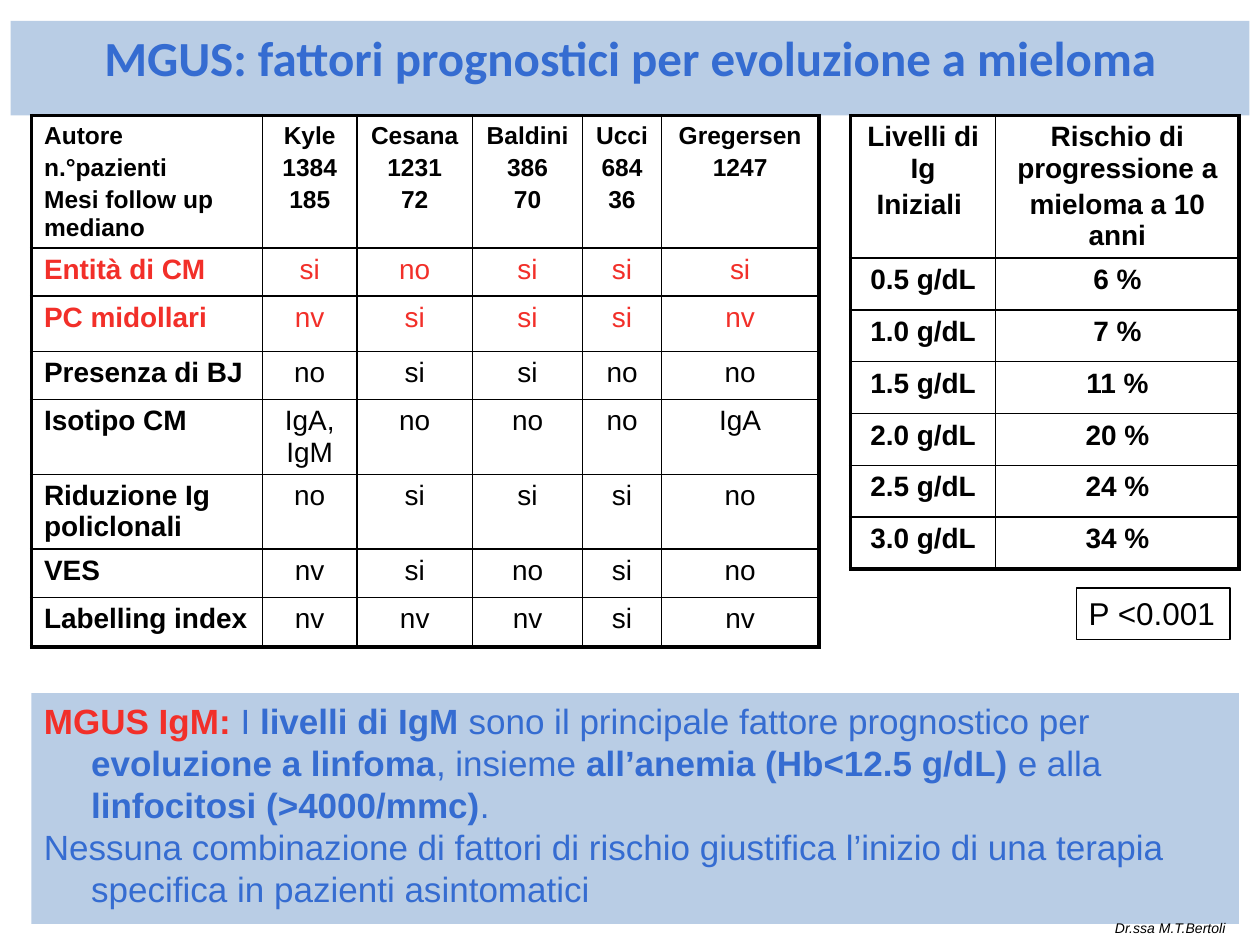
"""Build the slide on prognostic factors for the evolution of MGUS to myeloma."""
from dataclasses import dataclass

from lxml import etree
from pptx import Presentation
from pptx.dml.color import RGBColor
from pptx.enum.shapes import MSO_SHAPE
from pptx.enum.text import MSO_ANCHOR, MSO_AUTO_SIZE, PP_ALIGN
from pptx.oxml.ns import qn
from pptx.util import Pt

RECT = MSO_SHAPE.RECTANGLE
TOP = MSO_ANCHOR.TOP
NO_FIT, GROW = MSO_AUTO_SIZE.NONE, MSO_AUTO_SIZE.SHAPE_TO_FIT_TEXT
LEFT, CENTER = PP_ALIGN.LEFT, PP_ALIGN.CENTER
BLACK, RED, BLUE, PALE = "000000", "F22F29", "356CD1", "B9CDE5"
THIN, THICK = 1, 2.25


@dataclass
class Box:
    left: float
    top: float
    width: float
    height: float

    def lengths(self) -> tuple:
        return Pt(self.left), Pt(self.top), Pt(self.width), Pt(self.height)


@dataclass
class Run:
    text: str
    size: float
    color: str = BLACK
    bold: bool = False
    italic: bool = False
    font: str = "Arial"


@dataclass
class Grid:
    left: float
    top: float
    cols: list[float]
    heights: list[float]
    rows: list[list[str]]
    head_size: float
    factors: bool
    red_rows: tuple[int, ...] = ()


FACTORS = Grid(
    18, 66, [132, 54, 66, 63, 45, 90], [40, 27.5, 31.5, 27.5, 27.5, 31.5, 27.5, 28.5],
    [
        ["Autore\nn.°pazienti\nMesi follow up mediano", "Kyle\n1384\n185", "Cesana\n1231\n72",
         "Baldini\n386\n70", "Ucci\n684\n36", "Gregersen\n1247"],
        ["Entità di CM", "si", "no", "si", "si", "si"],
        ["PC midollari", "nv", "si", "si", "si", "nv"],
        ["Presenza di BJ", "no", "si", "si", "no", "no"],
        ["Isotipo CM", "IgA, IgM", "no", "no", "no", "IgA"],
        ["Riduzione Ig policlonali", "no", "si", "si", "si", "no"],
        ["VES", "nv", "si", "no", "si", "no"],
        ["Labelling index", "nv", "nv", "nv", "si", "nv"],
    ],
    14, True, (1, 2))
RISKS = Grid(
    486, 66, [83, 139], [39.5] + [29.6] * 6,
    [
        ["Livelli di Ig\nIniziali ", "Rischio di progressione a\nmieloma a 10 anni"],
        ["0.5 g/dL", "6 %"],
        ["1.0 g/dL", "7 %"],
        ["1.5 g/dL", "11 %"],
        ["2.0 g/dL", "20 %"],
        ["2.5 g/dL", "24 %"],
        ["3.0 g/dL", "34 %"],
    ],
    16, False)
SUMMARY = [
    [
        Run("MGUS IgM: ", 20, RED, True),
        Run("I ", 20, BLUE),
        Run("livelli di IgM", 20, BLUE, True),
        Run(" sono il principale fattore prognostico per ", 20, BLUE),
        Run("evoluzione a linfoma", 20, BLUE, True),
        Run(", insieme ", 20, BLUE),
        Run("all’anemia (Hb<12.5 g/dL)", 20, BLUE, True),
        Run(" e alla ", 20, BLUE),
        Run("linfocitosi (>4000/mmc)", 20, BLUE, True),
        Run(".", 20, BLUE),
    ],
    [Run("Nessuna combinazione di fattori di rischio giustifica l’inizio di una terapia "
         "specifica in pazienti asintomatici", 20, BLUE)],
]


def rgb(color: str) -> RGBColor:
    return RGBColor.from_string(color)


def write(tf, paragraphs: list[list[Run]], align=LEFT, before: int = 0, hang: float = 0) -> None:
    for i, runs in enumerate(paragraphs):
        p = tf.add_paragraph() if i else tf.paragraphs[0]
        p.alignment = align
        pPr = p._p.get_or_add_pPr()
        if hang:
            pPr.set("marL", str(Pt(hang)))
            pPr.set("indent", str(Pt(-hang)))
        gap = etree.SubElement(pPr, qn("a:spcBef"))
        etree.SubElement(gap, qn("a:spcPct"), val=str(before * 1000))
        for run in runs:
            r = p.add_run()
            r.text = run.text
            f = r.font
            f.name, f.size, f.bold, f.italic = run.font, Pt(run.size), run.bold, run.italic
            f.color.rgb = rgb(run.color)


def set_borders(cell, widths: dict[str, float]) -> None:
    tcPr = cell._tc.get_or_add_tcPr()
    for side, width in widths.items():
        ln = etree.SubElement(tcPr, qn(f"a:ln{side}"), w=str(Pt(width)))
        fill = etree.SubElement(ln, qn("a:solidFill"))
        etree.SubElement(fill, qn("a:srgbClr"), val=BLACK)


def add_grid(s, grid: Grid) -> None:
    n_rows, n_cols = len(grid.heights), len(grid.cols)
    box = Box(grid.left, grid.top, sum(grid.cols), sum(grid.heights))
    table = s.shapes.add_table(n_rows, n_cols, *box.lengths()).table
    table.first_row = table.horz_banding = False
    for column, width in zip(table.columns, grid.cols):
        column.width = Pt(width)
    for i, (row, height) in enumerate(zip(grid.rows, grid.heights)):
        table.rows[i].height = Pt(height)
        for j, text in enumerate(row):
            cell = table.cell(i, j)
            set_borders(cell, {
                "L": THIN if j else THICK,
                "R": THICK if j == n_cols - 1 else THIN,
                "T": THIN if i else THICK,
                "B": THICK if i == n_rows - 1 else THIN,
            })
            cell.fill.background()
            size = 16 if i else grid.head_size
            color = RED if i in grid.red_rows else BLACK
            bold = not grid.factors or i == 0 or j == 0
            align = LEFT if grid.factors and j == 0 else CENTER
            lines = [[Run(line, size, color, bold)] for line in text.split("\n")]
            write(cell.text_frame, lines, align, before=20)


def add_title(s) -> None:
    sp = s.shapes.title
    sp.left, sp.top, sp.width, sp.height = Box(6, 12, 708, 54).lengths()
    sp.fill.solid()
    sp.fill.fore_color.rgb = rgb(PALE)
    tf = sp.text_frame
    tf.auto_size, tf.vertical_anchor = NO_FIT, TOP
    title = Run("MGUS: fattori prognostici per evoluzione a mieloma", 28, BLUE, True, font="Calibri")
    write(tf, [[title]], CENTER, before=20)


def add_summary(s) -> None:
    sp = s.shapes.add_shape(RECT, *Box(18, 396, 690, 132).lengths())
    sp.shadow.inherit = False
    sp.fill.solid()
    sp.fill.fore_color.rgb = rgb(PALE)
    sp.line.fill.background()
    sp.text_frame.vertical_anchor = TOP
    write(sp.text_frame, SUMMARY, hang=27)


def add_label(s, box: Box, run: Run, wrap: bool, before: int = 0):
    sp = s.shapes.add_textbox(*box.lengths())
    sp.text_frame.word_wrap = wrap
    sp.text_frame.auto_size = GROW
    write(sp.text_frame, [[run]], before=before)
    return sp


def main() -> None:
    prs = Presentation()
    prs.slide_width, prs.slide_height = Pt(720), Pt(540)
    s = prs.slides.add_slide(prs.slide_layouts[5])
    add_title(s)
    add_grid(s, FACTORS)
    add_grid(s, RISKS)
    p_value = add_label(s, Box(615, 336, 88, 29.5), Run("P <0.001", 18), False)
    p_value.line.color.rgb = rgb(BLACK)
    p_value.line.width = Pt(0.75)
    add_summary(s)
    add_label(s, Box(630, 522, 84, 16.5), Run("Dr.ssa M.T.Bertoli", 8, italic=True), True, 50)
    prs.save("out.pptx")


if __name__ == "__main__":
    main()
